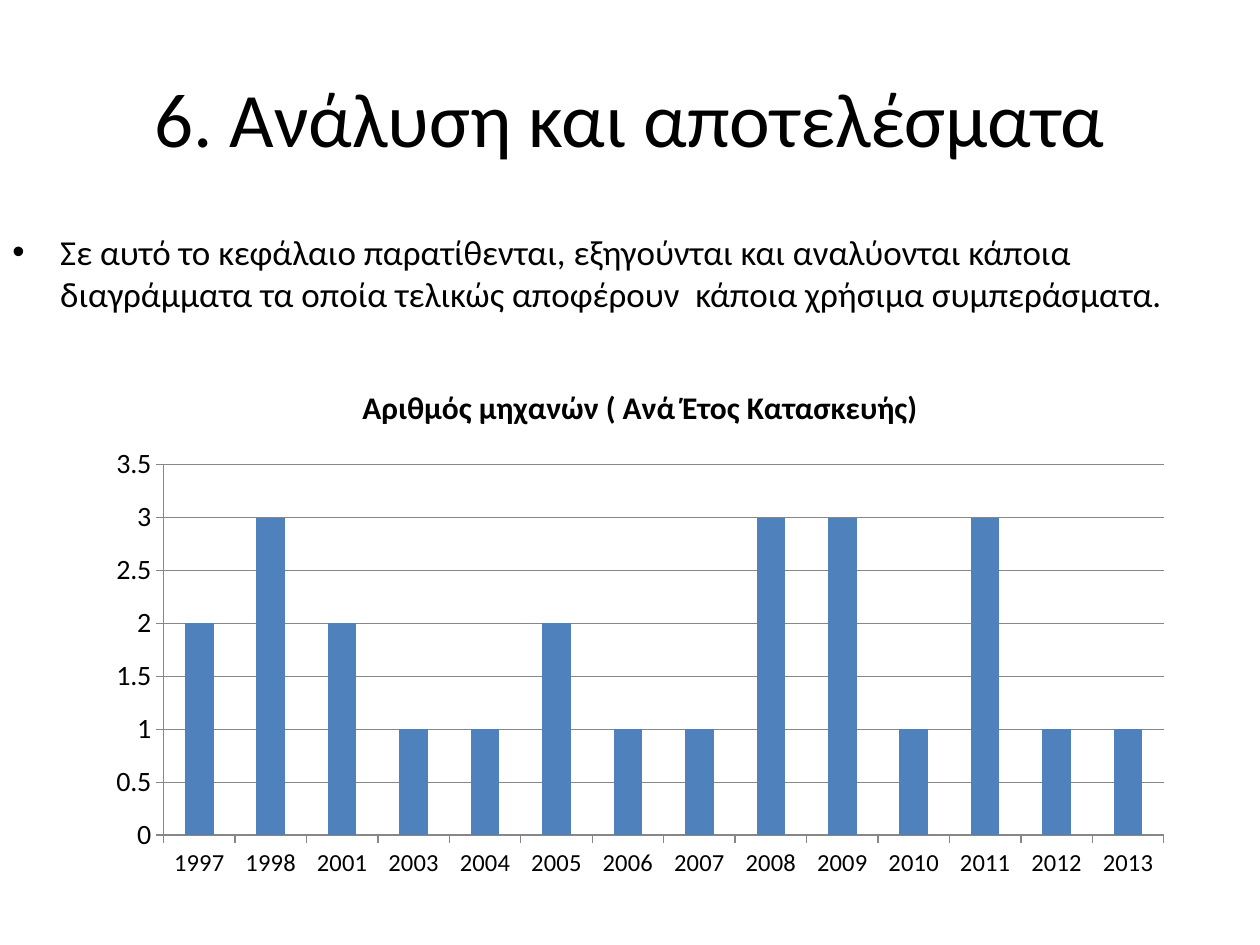
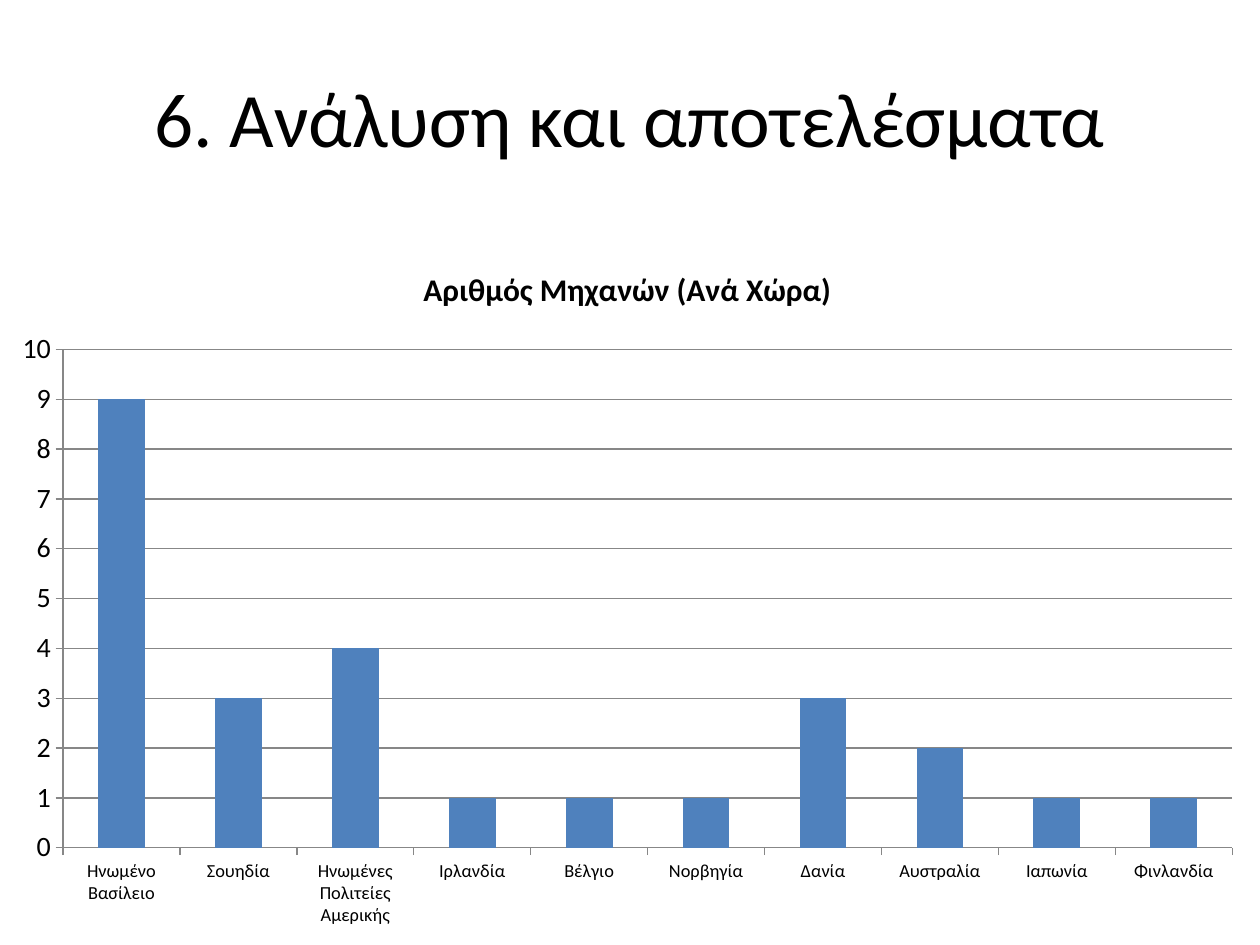
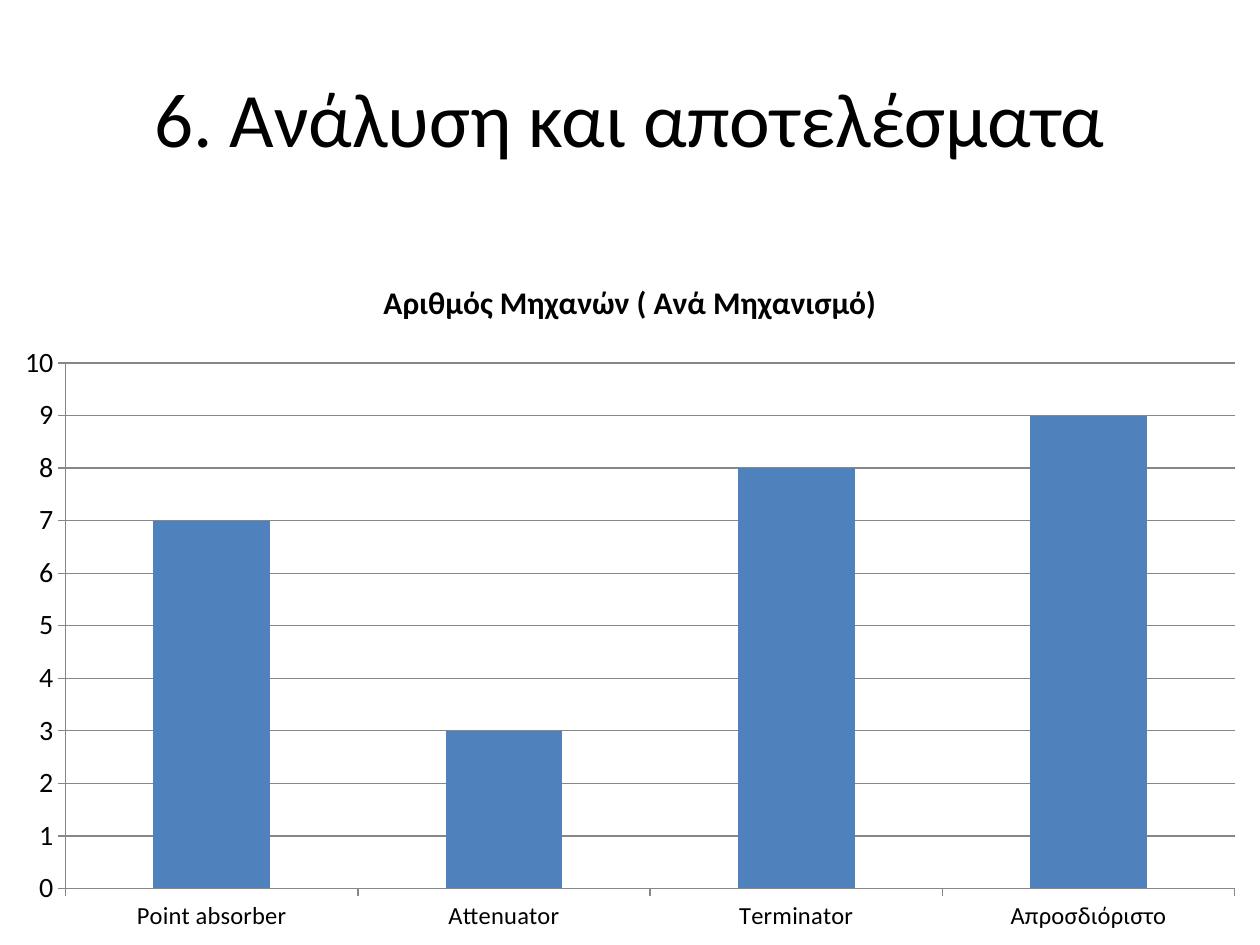
from dataclasses import dataclass

from lxml.etree import SubElement
from pptx import Presentation
from pptx.chart.data import CategoryChartData
from pptx.dml.color import RGBColor
from pptx.enum.chart import XL_CHART_TYPE as ChartType, XL_TICK_MARK as Tick
from pptx.enum.text import MSO_ANCHOR as Anchor, PP_ALIGN as Align
from pptx.oxml.ns import qn
from pptx.util import Inches, Pt


@dataclass(frozen=True)
class Theme:
    font: str = "Calibri"
    ink: RGBColor = RGBColor(0x00, 0x00, 0x00)
    bar: RGBColor = RGBColor(0x4F, 0x81, 0xBD)
    rule: RGBColor = RGBColor(0x87, 0x87, 0x87)
    title_size: float = 44
    body_size: float = 20
    chart_size: float = 10
    chart_title_size: float = 18
    value_size: float = 16
    category_size: float = 14
    small_category_size: float = 10.5


COLUMNS, ROWS = 20, 15
HEADING = "6. Ανάλυση και αποτελέσματα"
INTRO = ("Σε αυτό το κεφάλαιο παρατίθενται, εξηγούνται και αναλύονται κάποια "
         "διαγράμματα τα οποία τελικώς αποφέρουν  κάποια χρήσιμα συμπεράσματα.")

MACHINES_BY_YEAR = {
    "1997": 2, "1998": 3, "2001": 2, "2003": 1, "2004": 1, "2005": 2, "2006": 1,
    "2007": 1, "2008": 3, "2009": 3, "2010": 1, "2011": 3, "2012": 1, "2013": 1,
}
MACHINES_BY_COUNTRY = {
    "Ηνωμένο Βασίλειο": 9, "Σουηδία": 3, "Ηνωμένες Πολιτείες Αμερικής": 4,
    "Ιρλανδία": 1, "Βέλγιο": 1, "Νορβηγία": 1, "Δανία": 3, "Αυστραλία": 2,
    "Ιαπωνία": 1, "Φινλανδία": 1,
}
MACHINES_BY_MECHANISM = {
    "Point absorber": 7, "Attenuator": 3, "Terminator": 8, "Απροσδιόριστο": 9,
}


class DeckBuilder:
    """Holds the style and the current slide; places are in grid columns and rows."""

    def __init__(self, theme):
        self.theme = theme
        self.deck = Presentation()
        self.deck.slide_width, self.deck.slide_height = Inches(10), Inches(7.5)
        self.slide = None

    def place(self, column, row, width, height):
        across = self.deck.slide_width / COLUMNS
        down = self.deck.slide_height / ROWS
        return (round(column * across), round(row * down),
                round(width * across), round(height * down))

    def style(self, font, size, bold=False):
        font.name, font.size, font.bold = self.theme.font, Pt(size), bold
        font.color.rgb = self.theme.ink

    def text(self, words, area, size, anchor=Anchor.TOP):
        box = self.slide.shapes.add_textbox(*self.place(*area))
        frame = box.text_frame
        frame.word_wrap = True
        frame.vertical_anchor = anchor
        frame.text = words
        para = frame.paragraphs[0]
        self.style(para.runs[0].font, size)
        return para

    def new_slide(self):
        self.slide = self.deck.slides.add_slide(self.deck.slide_layouts[6])
        heading = self.text(HEADING, (1, 0.6, 18, 2.5), self.theme.title_size, Anchor.MIDDLE)
        heading.alignment = Align.CENTER

    def bullet(self, words, area):
        para = self.text(words, area, self.theme.body_size)
        para.space_before = Pt(0.2 * self.theme.body_size)
        properties = para._p.get_or_add_pPr()
        indent = Inches(0.38)
        properties.set("marL", str(indent))
        properties.set("indent", str(-indent))
        SubElement(properties, qn("a:buFont"), typeface="Arial")
        SubElement(properties, qn("a:buChar"), char="•")

    def axis(self, axis, size):
        axis.major_tick_mark, axis.minor_tick_mark = Tick.OUTSIDE, Tick.NONE
        self.rule(axis.format.line)
        self.style(axis.tick_labels.font, size)

    def rule(self, line):
        line.color.rgb = self.theme.rule
        line.width = Pt(0.75)

    def column_chart(self, title, counts, area, top, step, category_size):
        data = CategoryChartData()
        data.categories = list(counts)
        data.add_series("Series 1", list(counts.values()))
        chart = self.slide.shapes.add_chart(
            ChartType.COLUMN_CLUSTERED, *self.place(*area), data).chart
        self.style(chart.font, self.theme.chart_size)
        chart.has_legend = False

        # Chart title
        chart.has_title = True
        frame = chart.chart_title.text_frame
        frame.text = title
        self.style(frame.paragraphs[0].runs[0].font, self.theme.chart_title_size, bold=True)
        chart.chart_title.include_in_layout = False

        # Axes and gridlines
        self.axis(chart.category_axis, category_size)
        values = chart.value_axis
        self.axis(values, self.theme.value_size)
        values.minimum_scale, values.maximum_scale, values.major_unit = 0, top, step
        values.has_major_gridlines = True
        self.rule(values.major_gridlines.format.line)

        # Columns
        plot = chart.plots[0]
        plot.gap_width = 150
        plot.vary_by_categories = False
        fill = plot.series[0].format.fill
        fill.solid()
        fill.fore_color.rgb = self.theme.bar


def main():
    theme = Theme()
    builder = DeckBuilder(theme)

    # Machines by year of construction
    builder.new_slide()
    builder.bullet(INTRO, (0, 3.56, 20, 11.44))
    builder.column_chart("Αριθμός μηχανών ( Ανά Έτος Κατασκευής)", MACHINES_BY_YEAR,
                         (1.5, 5.76, 17.32, 8.34), 3.5, 0.5, theme.category_size)

    # Machines by country
    builder.new_slide()
    builder.column_chart("Αριθμός Μηχανών (Ανά Χώρα)", MACHINES_BY_COUNTRY,
                         (-0.04, 3.82, 20, 11.12), 10, 1, theme.small_category_size)

    # Machines by mechanism
    builder.new_slide()
    builder.column_chart("Αριθμός Μηχανών ( Ανά Μηχανισμό)", MACHINES_BY_MECHANISM,
                         (0, 4.04, 20, 10.96), 10, 1, theme.category_size)

    builder.deck.save("out.pptx")


if __name__ == "__main__":
    main()
